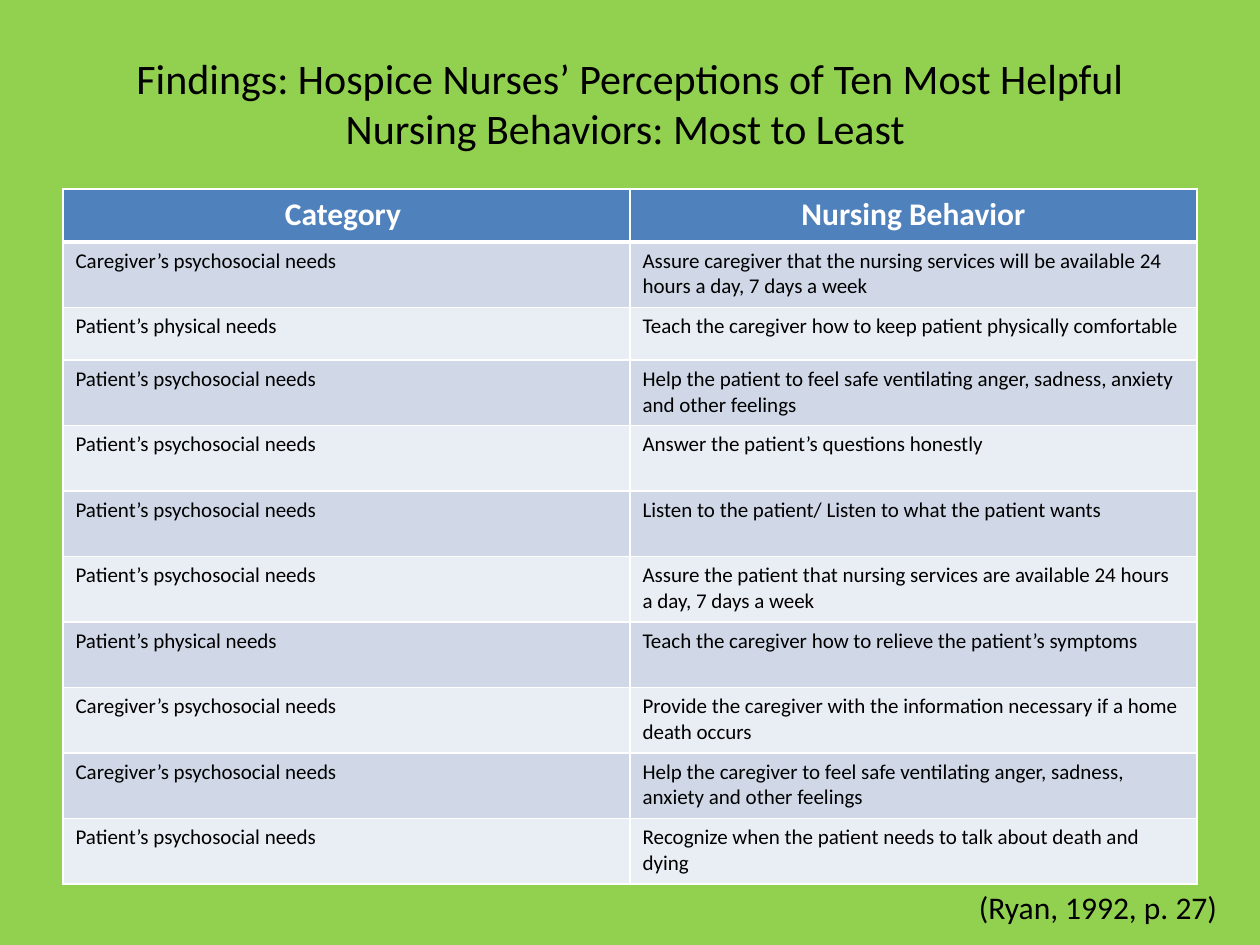
from lxml import etree
from pptx import Presentation
from pptx.dml.color import RGBColor
from pptx.enum import text as t
from pptx.oxml import ns
from pptx.util import Inches, Pt

CARE = "Caregiver’s psychosocial needs"
BODY = "Patient’s physical needs"
MIND = "Patient’s psychosocial needs"
ROWS = [
    ("Category ", "Nursing Behavior"),
    (CARE, "Assure caregiver that the nursing services will be available 24 hours a day, 7 days a week"),
    (BODY, "Teach the caregiver how to keep patient physically comfortable"),
    (MIND, "Help the patient to feel safe ventilating anger, sadness, anxiety and other feelings"),
    (MIND, "Answer the patient’s questions honestly"),
    (MIND, "Listen to the patient/ Listen to what the patient wants"),
    (MIND, "Assure the patient that nursing services are available 24 hours a day, 7 days a week"),
    (BODY, "Teach the caregiver how to relieve the patient’s symptoms"),
    (CARE, "Provide the caregiver with the information necessary if a home death occurs"),
    (CARE, "Help the caregiver to feel safe ventilating anger, sadness, anxiety and other feelings"),
    (MIND, "Recognize when the patient needs to talk about death and dying"),
]
SHORT = {0, 2}
CENTER = t.PP_ALIGN.CENTER


def color(code):
    return RGBColor.from_string(code)


class Deck:
    font = "Calibri"
    ink, white, head = "000000", "FFFFFF", "4F81BD"
    bands = "E9EDF4", "D0D8E8"

    def __init__(self, slide):
        self.slide = slide

    def ground(self, code):
        fill = self.slide.background.fill
        fill.solid()
        fill.fore_color.rgb = color(code)

    def words(self, frame, line, size, code=ink, bold=False, align=t.PP_ALIGN.LEFT):
        para = frame.paragraphs[0]
        para.alignment = align
        run = para.add_run()
        run.text = line
        style = {"name": self.font, "size": Pt(size), "bold": bold}
        for key, value in style.items():
            setattr(run.font, key, value)
        run.font.color.rgb = color(code)

    def label(self, box, line, size, align=t.PP_ALIGN.LEFT, **form):
        frame = self.slide.shapes.add_textbox(*map(Inches, box)).text_frame
        for key, value in form.items():
            setattr(frame, key, value)
        self.words(frame, line, size, align=align)

    def edge(self, cell, base):
        """Draw white cell borders; base is the bottom width in points."""
        props = cell._tc.get_or_add_tcPr()
        widths = {"lnL": 1, "lnR": 1, "lnT": 1, "lnB": base}
        for spot, (tag, width) in enumerate(widths.items()):
            side = etree.Element(ns.qn("a:" + tag), w=str(Pt(width)))
            fill = etree.SubElement(side, ns.qn("a:solidFill"))
            etree.SubElement(fill, ns.qn("a:srgbClr"), val=self.white)
            props.insert(spot, side)

    def table(self, box, rows):
        shape = self.slide.shapes.add_table(len(rows), len(rows[0]), *map(Inches, box))
        grid = shape.table
        for r, row in enumerate(rows):
            grid.rows[r].height = Inches(0.42 if r in SHORT else 0.52)
            for c, line in enumerate(row):
                cell = grid.cell(r, c)
                cell.fill.solid()
                cell.fill.fore_color.rgb = color(self.bands[r % 2] if r else self.head)
                if r:
                    self.words(cell.text_frame, line, 12)
                else:
                    self.words(cell.text_frame, line, 18, self.white, True, CENTER)
                self.edge(cell, 1 if r else 3)


def main():
    show = Presentation()
    show.slide_width, show.slide_height = Inches(10), Inches(7.5)
    deck = Deck(show.slides.add_slide(show.slide_layouts[6]))
    deck.ground("92D050")
    deck.label((0.5, 0.3, 9, 1.03),
               "Findings: Hospice Nurses’ Perceptions of Ten Most Helpful "
               "Nursing Behaviors: Most to Least ", 24, CENTER,
               word_wrap=True, vertical_anchor=t.MSO_ANCHOR.MIDDLE)
    deck.table((0.5, 1.5, 9, 5.56), ROWS)
    deck.label((7.67, 7, 2.12, 0.4), "(Ryan, 1992, p. 27)", 18,
               word_wrap=False, auto_size=t.MSO_AUTO_SIZE.SHAPE_TO_FIT_TEXT)
    show.save("out.pptx")


if __name__ == "__main__":
    main()
